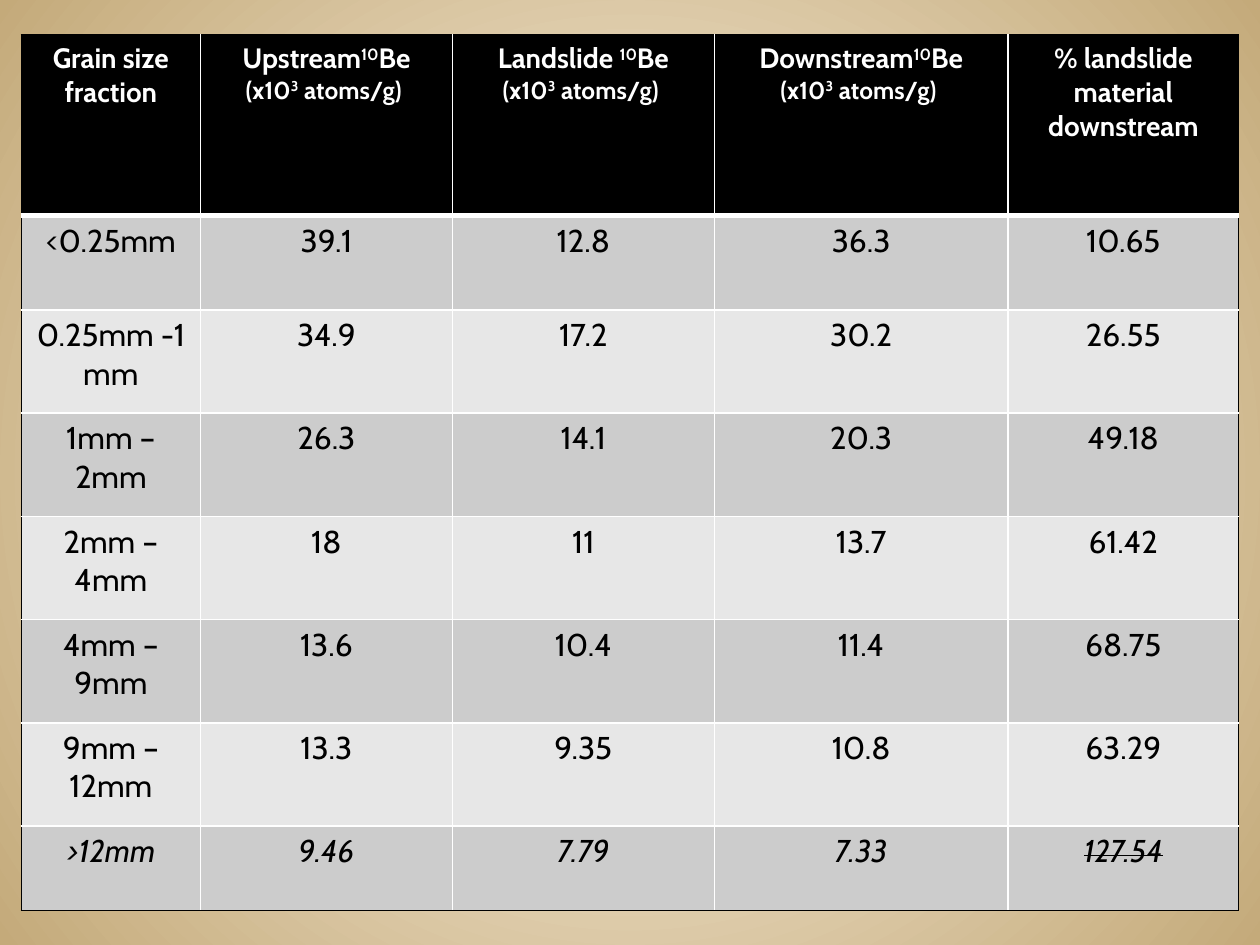
from lxml import etree
from pptx import Presentation
from pptx import util as u
from pptx.dml.color import RGBColor
from pptx.enum import text
from pptx.oxml.ns import qn

COLORS = {
    "glow": "FFF7E8",
    "sand": "C4AA7A",
    "black": "000000",
    "white": "FFFFFF",
    "band": "CCCCCC",
    "light": "E7E7E7",
}
FONT = "Cabin"
UNIT = [("(x10", False), ("3", True), (" atoms/g) ", False)]
FRACTIONS = [
    ("<0.25mm", "39.1", "12.8", "36.3", "10.65"),
    ("0.25mm -1 mm", "34.9", "17.2", "30.2", "26.55"),
    ("1mm – 2mm", "26.3", "14.1", "20.3", "49.18"),
    ("2mm – 4mm", "18", "11", "13.7", "61.42"),
    ("4mm – 9mm", "13.6", "10.4", "11.4", "68.75"),
    ("9mm – 12mm", "13.3", "9.35", "10.8", "63.29"),
    (">12mm", "9.46", "7.79", "7.33", "127.54"),
]
COLUMN_WIDTHS = [3.61, 5.08, 5.28, 5.92, 4.65]
ROW_HEIGHTS = [3.63, 1.91] + [2.08] * 5 + [1.7]


def rgb(name):
    """Return the named colour."""
    return RGBColor.from_string(COLORS[name])


def paint_background(slide):
    """Fill the slide with a circular gradient, light in the middle."""
    fill = slide.background.fill
    fill.gradient()
    for stop, name in zip(fill.gradient_stops, ("glow", "sand")):
        stop.color.rgb = rgb(name)
    gradient = slide._element.find(".//" + qn("a:gradFill"))
    gradient.remove(gradient.find(qn("a:lin")))
    circle = etree.SubElement(gradient, qn("a:path"))
    circle.set("path", "circle")
    center = etree.SubElement(circle, qn("a:fillToRect"))
    for side in "ltrb":
        center.set(side, "50000")


def write_line(paragraph, pieces, size, color, bold=False, italic=False):
    """Write a centred line from (wording, superscript) pieces."""
    paragraph.alignment = text.PP_ALIGN.CENTER
    for wording, superscript in pieces:
        run = paragraph.add_run()
        run.text = wording
        font = run.font
        font.name, font.size = FONT, u.Pt(size)
        font.bold, font.italic = bold, italic
        font.color.rgb = rgb(color)
        if superscript:
            font._element.set("baseline", "30000")


def set_borders(cell, row, column, last_row, last_column):
    """Rule a cell in white inside the table and black along its rim."""
    rims = {
        "L": column == 0,
        "R": column == last_column,
        "T": row == 0,
        "B": row == last_row,
    }
    properties = cell._tc.get_or_add_tcPr()
    for side, on_rim in rims.items():
        width = 3 if row == 0 and side == "B" else 1
        line = etree.SubElement(properties, qn("a:ln" + side), w=str(u.Pt(width)))
        solid = etree.SubElement(line, qn("a:solidFill"))
        color = COLORS["black" if on_rim else "white"]
        etree.SubElement(solid, qn("a:srgbClr"), val=color)


def write_header(cells):
    """Write the column headings, with units under the isotope columns."""
    headings = [
        [("Grain size fraction", False)],
        *[[(site, False), ("10", True), ("Be", False)]
          for site in ("Upstream", "Landslide ", "Downstream")],
        [("% landslide material downstream", False)],
    ]
    for cell, heading in zip(cells, headings):
        frame = cell.text_frame
        write_line(frame.paragraphs[0], heading, 16, "white", bold=True)
        if len(heading) > 1:
            write_line(frame.add_paragraph(), UNIT, 14, "white", bold=True)


def add_fraction_table(slide, left, top, width, height):
    """Place the table of isotope concentrations by grain size."""
    table = slide.shapes.add_table(
        len(ROW_HEIGHTS), len(COLUMN_WIDTHS), left, top, width, height).table
    for column, column_width in zip(table.columns, COLUMN_WIDTHS):
        column.width = u.Cm(column_width)
    for row, row_height in zip(table.rows, ROW_HEIGHTS):
        row.height = u.Cm(row_height)

    last_row, last_column = len(ROW_HEIGHTS) - 1, len(COLUMN_WIDTHS) - 1
    for r, row in enumerate(table.rows):
        shade = "black" if r == 0 else "band" if r % 2 else "light"
        for c, cell in enumerate(row.cells):
            set_borders(cell, r, c, last_row, last_column)
            cell.fill.solid()
            cell.fill.fore_color.rgb = rgb(shade)

    write_header(table.rows[0].cells)
    for r, fraction in enumerate(FRACTIONS, start=1):
        for c, value in enumerate(fraction):
            write_line(table.cell(r, c).text_frame.paragraphs[0],
                       [(value, False)], 18, "black", italic=r == last_row)
    rejected = table.cell(last_row, last_column).text_frame.paragraphs[0].runs[0]
    rejected.font._element.set("strike", "sngStrike")


def main():
    """Build and save the slide."""
    deck = Presentation()
    deck.slide_width, deck.slide_height = u.Cm(25.4), u.Cm(19.05)
    slide = deck.slides.add_slide(deck.slide_layouts[6])
    paint_background(slide)
    add_fraction_table(slide, u.Cm(0.43), u.Cm(0.71),
                       u.Cm(sum(COLUMN_WIDTHS)), u.Cm(sum(ROW_HEIGHTS)))
    deck.save("out.pptx")


if __name__ == "__main__":
    main()
